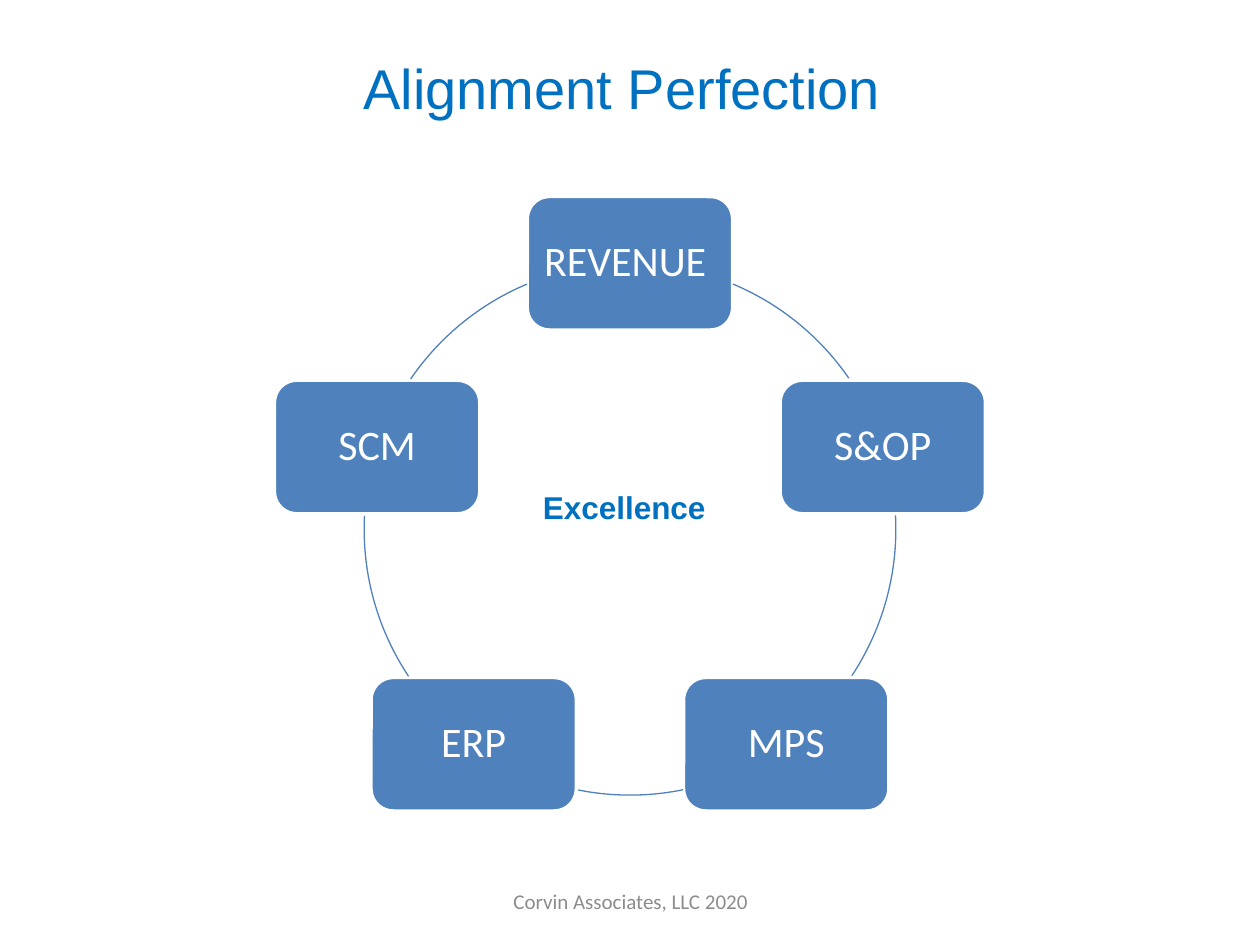
from dataclasses import dataclass
from math import cos, radians, sin

from pptx import Presentation
from pptx.dml.color import RGBColor
from pptx.enum.shapes import MSO_SHAPE as Shape
from pptx.enum.text import MSO_ANCHOR as Anchor, PP_ALIGN as Align
from pptx.util import Inches, Pt


@dataclass(frozen=True)
class Theme:
    accent: RGBColor = RGBColor(0x00, 0x70, 0xC0)
    box: RGBColor = RGBColor(0x4F, 0x81, 0xBD)
    white: RGBColor = RGBColor(0xFF, 0xFF, 0xFF)
    muted: RGBColor = RGBColor(0x8C, 0x8C, 0x8C)
    heading: str = "Arial"
    body: str = "Calibri"
    title_size: int = 32
    box_size: int = 24
    center_size: int = 18
    footer_size: int = 12


class Deck:
    columns, rows = 100, 75

    def __init__(self, theme):
        self.theme = theme
        self.prs = Presentation()
        self.prs.slide_width, self.prs.slide_height = Inches(10), Inches(7.5)
        self.s = self.prs.slides.add_slide(self.prs.slide_layouts[5])

    def area(self, x, y, w, h):
        col = self.prs.slide_width / self.columns
        row = self.prs.slide_height / self.rows
        return round(x * col), round(y * row), round(w * col), round(h * row)

    def set_text(self, sp, text, font, size, color, bold=False, align=Align.CENTER):
        tf = sp.text_frame
        tf.word_wrap = True
        tf.vertical_anchor = Anchor.MIDDLE
        p = tf.paragraphs[0]
        p.text = text
        p.alignment = align
        p.font.name, p.font.size, p.font.bold = font, Pt(size), bold
        p.font.color.rgb = color
        return tf

    def title(self, text, *area):
        sp = self.s.shapes.title
        sp.left, sp.top, sp.width, sp.height = self.area(*area)
        t = self.theme
        self.set_text(sp, text, t.heading, t.title_size, t.accent)

    def label(self, text, area, *style, **options):
        sp = self.s.shapes.add_textbox(*self.area(*area))
        self.set_text(sp, text, *style, **options)

    def box(self, text, cx, cy, w, h):
        t = self.theme
        area = self.area(cx - w / 2, cy - h / 2, w, h)
        sp = self.s.shapes.add_shape(Shape.ROUNDED_RECTANGLE, *area)
        sp.shadow.inherit = False
        sp.fill.solid()
        sp.fill.fore_color.rgb = t.box
        sp.line.color.rgb = t.white
        sp.line.width = Pt(2)
        tf = self.set_text(sp, text, t.body, t.box_size, t.white)
        tf.margin_left = tf.margin_right = Inches(0.05)
        tf.paragraphs[0].line_spacing = 0.9

    def arc(self, cx, cy, radius, start, end):
        area = self.area(cx - radius, cy - radius, 2 * radius, 2 * radius)
        sp = self.s.shapes.add_shape(Shape.ARC, *area)
        sp.shadow.inherit = False
        sp.fill.background()
        sp.line.color.rgb = self.theme.box
        sp.line.width = Pt(0.75)
        for i, angle in enumerate((start, end)):
            sp.adjustments[i] = angle % 360 * 0.6

    def cycle(self, names, arcs, cx, cy, radius, w, h):
        for i, (name, (start, end)) in enumerate(zip(names, arcs)):
            angle = radians(360 / len(names) * i - 90)
            self.box(name, cx + radius * cos(angle), cy + radius * sin(angle), w, h)
            self.arc(cx, cy, radius, start, end)


def main():
    t = Theme()
    deck = Deck(t)
    deck.title("Alignment Perfection ", 5, 1.8, 90, 10.3)

    right = [(-67.2, -34.4), (-3, 33.6)]
    left = [(180 - end, 180 - start) for start, end in reversed(right)]
    deck.cycle(
        ["REVENUE ", "S&OP", "MPS", "ERP", "SCM"],
        right + [(78.5, 101.5)] + left,
        cx=50, cy=42, radius=21.1, w=16.3, h=10.6,
    )

    deck.label("Excellence", (42.1, 38.2, 18.3, 4),
               t.heading, t.center_size, t.accent, bold=True, align=Align.LEFT)
    deck.label("Corvin Associates, LLC 2020", (34.2, 69.5, 31.7, 4),
               t.body, t.footer_size, t.muted)
    deck.prs.save("out.pptx")


if __name__ == "__main__":
    main()
